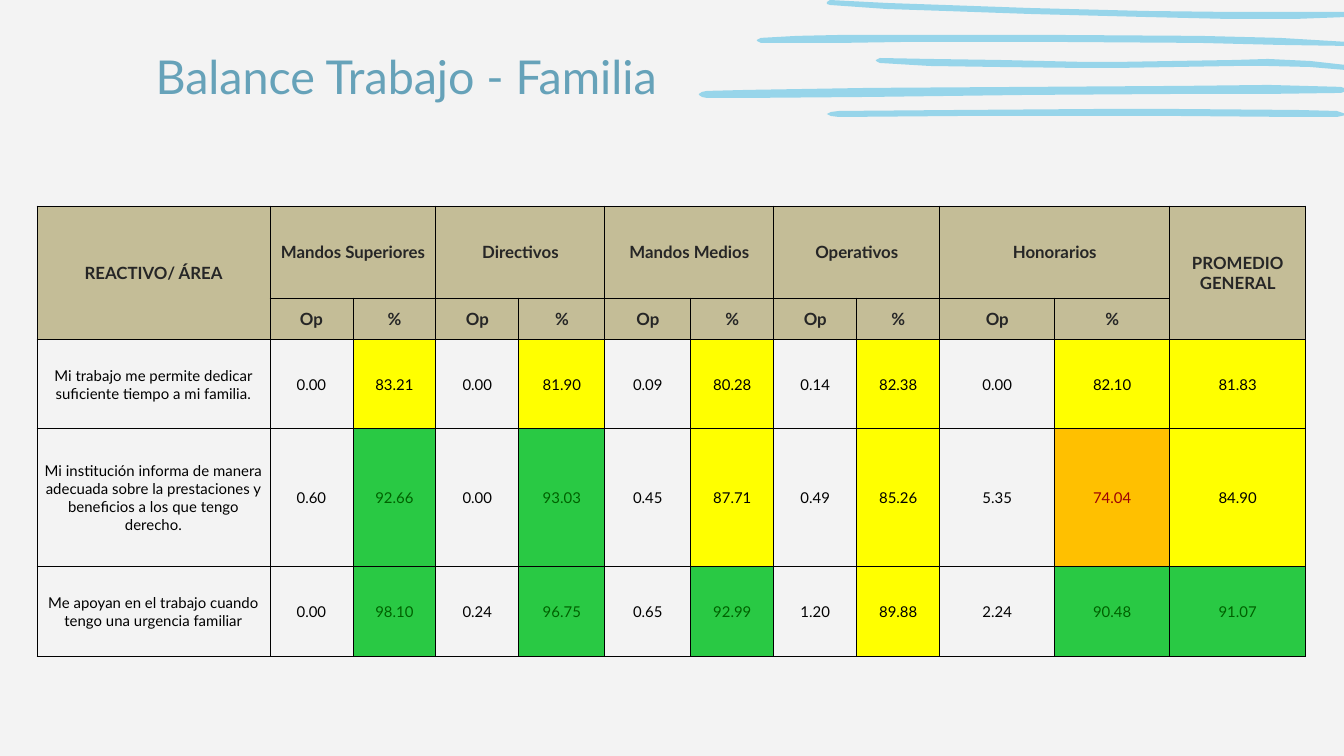
from dataclasses import dataclass
from typing import NamedTuple

from lxml import etree
from pptx import Presentation
from pptx import util as u
from pptx.dml.color import RGBColor
from pptx.enum import text
from pptx.oxml import ns

EMU_PER_PX = 914400 / 134.4
FONT = "Lato"
BACKGROUND, STROKE_BLUE, TITLE_BLUE = "F3F3F3", "97D5EA", "66A2B9"
HEADER_FILL, HEADER_INK, BLACK = "C4BD97", "262626", "000000"


class Section(NamedTuple):
    """A place along a brush stroke with its upper and lower edge, in px."""
    x: int
    top: int
    bottom: int


class Style(NamedTuple):
    ink: str
    fill: str | None
    size: int
    bold: bool = False


@dataclass(frozen=True)
class Question:
    wording: str
    values: tuple[str, ...]  # Op and % for each area, then the general average


STROKES = [
    [Section(827, 114, 114), Section(831, 112, 116), Section(839, 111, 117),
     Section(960, 110, 116), Section(1094, 109, 116), Section(1179, 109, 116),
     Section(1297, 110, 117), Section(1337, 111, 117), Section(1346, 114, 115)],
    [Section(699, 94, 95), Section(702, 92, 97), Section(707, 91, 98),
     Section(747, 90, 98), Section(870, 88, 97), Section(1028, 87, 95),
     Section(1183, 86, 94), Section(1269, 85, 94), Section(1341, 87, 93),
     Section(1347, 89, 91)],
    [Section(876, 60, 61), Section(880, 58, 63), Section(930, 59, 66),
     Section(999, 60, 67), Section(1086, 62, 68), Section(1115, 62, 68),
     Section(1235, 60, 66), Section(1268, 59, 66), Section(1310, 61, 67),
     Section(1346, 65, 70)],
    [Section(757, 40, 41), Section(761, 38, 43), Section(797, 36, 43),
     Section(841, 35, 43), Section(907, 35, 42), Section(1054, 35, 42),
     Section(1200, 36, 43), Section(1280, 38, 45), Section(1347, 42, 46)],
    [Section(827, 2, 4), Section(830, 0, 5), Section(887, 3, 9),
     Section(945, 5, 11), Section(1030, 8, 14), Section(1145, 11, 17),
     Section(1231, 12, 19), Section(1294, 12, 19), Section(1347, 12, 17)],
]

AREAS = ["Mandos Superiores", "Directivos", "Mandos Medios", "Operativos", "Honorarios"]
QUESTIONS = [
    Question("Mi trabajo me permite dedicar suficiente tiempo a mi familia.",
             ("0.00", "83.21", "0.00", "81.90", "0.09", "80.28",
              "0.14", "82.38", "0.00", "82.10", "81.83")),
    Question("Mi institución informa de manera adecuada sobre la prestaciones y "
             "beneficios a los que tengo derecho.",
             ("0.60", "92.66", "0.00", "93.03", "0.45", "87.71",
              "0.49", "85.26", "5.35", "74.04", "84.90")),
    Question("Me apoyan en el trabajo cuando tengo una urgencia familiar",
             ("0.00", "98.10", "0.24", "96.75", "0.65", "92.99",
              "1.20", "89.88", "2.24", "90.48", "91.07")),
]
COLUMNS = [233, 83, 83, 83, 86, 86, 83, 83, 83, 115, 115, 136]
ROWS = [92, 41, 89, 138, 90]

HEADER = Style(HEADER_INK, HEADER_FILL, 9, True)
PLAIN = Style(BLACK, None, 8)
HIGH = Style("006100", "29C944", 8)
MIDDLE = Style(BLACK, "FFFF00", 8)
LOW = Style("9C0006", "FFC000", 8)


def px(length: int) -> u.Emu:
    return u.Emu(round(length * EMU_PER_PX))


def colour(code: str) -> RGBColor:
    return RGBColor.from_string(code)


def score_style(score: float) -> Style:
    if score >= 90:
        return HIGH
    return MIDDLE if score >= 80 else LOW


def write(frame, wording: str, size: int, ink: str, alignment, bold: bool = False) -> None:
    para = frame.paragraphs[0]
    para.alignment = alignment
    span = para.add_run()
    span.text = wording
    span.font.name = FONT
    span.font.size = u.Pt(size)
    span.font.bold = bold
    span.font.color.rgb = colour(ink)


def draw_stroke(page, sections: list[Section]) -> None:
    upper = [(s.x, s.top) for s in sections]
    lower = [(s.x, s.bottom) for s in reversed(sections)]
    builder = page.shapes.build_freeform(*upper[0], scale=EMU_PER_PX)
    builder.add_line_segments(upper[1:] + lower, close=True)
    stroke = builder.convert_to_shape()
    stroke.shadow.inherit = False
    stroke.fill.solid()
    stroke.fill.fore_color.rgb = colour(STROKE_BLUE)
    stroke.line.fill.background()


def draw_title(page) -> None:
    box = page.shapes.add_textbox(px(-87), px(34), px(757), px(83))
    frame = box.text_frame
    frame.word_wrap = True
    frame.vertical_anchor = text.MSO_ANCHOR.MIDDLE
    frame.margin_left = frame.margin_right = u.Inches(0.1)
    frame.margin_top = frame.margin_bottom = u.Inches(0.1)
    write(frame, "Balance Trabajo - Familia", 25, TITLE_BLUE, text.PP_ALIGN.RIGHT)


def add_borders(cell) -> None:
    properties = cell._tc.get_or_add_tcPr()
    for side in ("a:lnL", "a:lnR", "a:lnT", "a:lnB"):
        line = etree.SubElement(properties, ns.qn(side), w=str(u.Pt(0.5)))
        fill = etree.SubElement(line, ns.qn("a:solidFill"))
        etree.SubElement(fill, ns.qn("a:srgbClr"), val=BLACK)


def fill_cell(cell, wording: str, style: Style) -> None:
    cell.vertical_anchor = text.MSO_ANCHOR.MIDDLE
    cell.margin_left = cell.margin_right = cell.margin_top = px(1)
    cell.margin_bottom = 0
    if style.fill:
        cell.fill.solid()
        cell.fill.fore_color.rgb = colour(style.fill)
    else:
        cell.fill.background()
    write(cell.text_frame, wording, style.size, style.ink, text.PP_ALIGN.CENTER, style.bold)


def draw_table(page) -> None:
    frame = page.shapes.add_table(len(ROWS), len(COLUMNS), px(37), px(206),
                                  px(sum(COLUMNS)), px(sum(ROWS)))
    table = frame.table
    table.first_row = table.horz_banding = False
    for column, width in zip(table.columns, COLUMNS):
        column.width = px(width)
    for row, height in zip(table.rows, ROWS):
        row.height = px(height)
    for cell in table.iter_cells():
        add_borders(cell)

    last = len(COLUMNS) - 1
    for column, wording in ((0, "REACTIVO/ ÁREA"), (last, "PROMEDIO GENERAL")):
        table.cell(0, column).merge(table.cell(1, column))
        fill_cell(table.cell(0, column), wording, HEADER)
    for index, area in enumerate(AREAS):
        left = 1 + 2 * index
        table.cell(0, left).merge(table.cell(0, left + 1))
        fill_cell(table.cell(0, left), area, HEADER)
        fill_cell(table.cell(1, left), "Op", HEADER)
        fill_cell(table.cell(1, left + 1), "%", HEADER)

    for row, question in enumerate(QUESTIONS, start=2):
        fill_cell(table.cell(row, 0), question.wording, PLAIN)
        for column, value in enumerate(question.values, start=1):
            is_score = column % 2 == 0 or column == last
            style = score_style(float(value)) if is_score else PLAIN
            fill_cell(table.cell(row, column), value, style)


def main() -> None:
    deck = Presentation()
    deck.slide_width, deck.slide_height = px(1344), px(756)
    page = deck.slides.add_slide(deck.slide_layouts[6])
    page.background.fill.solid()
    page.background.fill.fore_color.rgb = colour(BACKGROUND)
    for sections in STROKES:
        draw_stroke(page, sections)
    draw_title(page)
    draw_table(page)
    deck.save("out.pptx")


if __name__ == "__main__":
    main()
